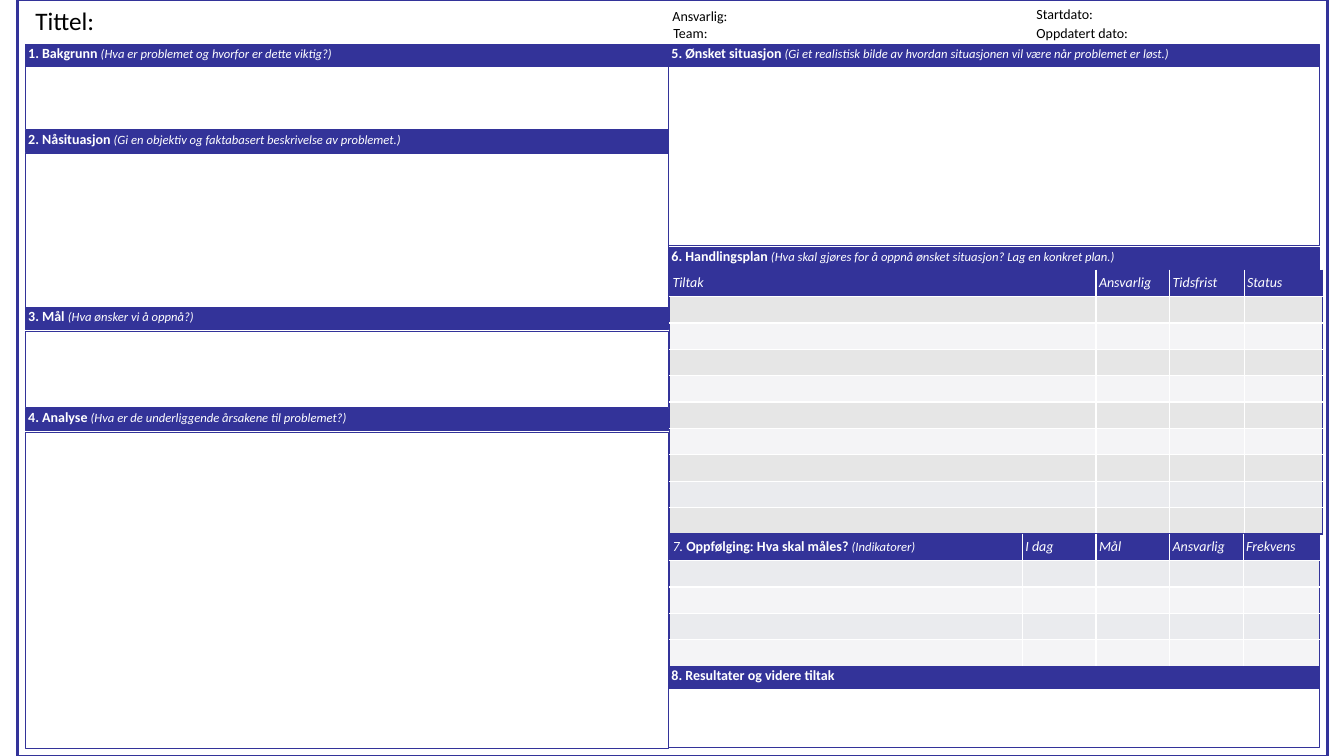
from lxml import etree
from pptx import Presentation
from pptx.dml.color import RGBColor
from pptx.enum.shapes import MSO_SHAPE
from pptx.enum.text import MSO_ANCHOR, PP_ALIGN
from pptx.oxml.ns import qn
from pptx.util import Inches, Pt

NAVY = RGBColor(0x33, 0x33, 0x99)
WHITE = RGBColor(0xFF, 0xFF, 0xFF)
BLACK = RGBColor(0x00, 0x00, 0x00)
GREY = RGBColor(0xE6, 0xE6, 0xE6)
PALE = RGBColor(0xF4, 0xF4, 0xF6)
MIST = RGBColor(0xEA, 0xEB, 0xEE)

FONT = "Calibri"
WIDTH, HEIGHT = 13.33, 7.5
LEFT_COLUMN = (0.25, 6.38)
RIGHT_COLUMN = (6.63, 6.46)
TABLE_LEFT = 6.64
BAR_HEIGHT = 0.22
ROW_HEIGHT = 0.262

# column, bar top, box top, box bottom, heading, hint
SECTIONS = [
    (LEFT_COLUMN, 0.44, 0.66, 1.29, "1. Bakgrunn ",
     "(Hva er problemet og hvorfor er dette viktig?)"),
    (LEFT_COLUMN, 1.29, 1.52, 3.05, "2. Nåsituasjon ",
     "(Gi en objektiv og faktabasert beskrivelse av problemet.)"),
    (LEFT_COLUMN, 3.05, 3.29, 4.04, "3. Mål ", "(Hva ønsker vi å oppnå?)"),
    (LEFT_COLUMN, 4.05, 4.29, 7.43, "4. Analyse ",
     "(Hva er de underliggende årsakene til problemet?)"),
    (RIGHT_COLUMN, 0.44, 0.66, 2.44, "5. Ønsket situasjon ",
     "(Gi et realistisk bilde av hvordan situasjonen vil være når problemet er løst.)"),
    (RIGHT_COLUMN, 2.46, None, None, "6. Handlingsplan ",
     "(Hva skal gjøres for å oppnå ønsket situasjon? Lag en konkret plan.)"),
    (RIGHT_COLUMN, 6.61, 6.82, 7.42, "8. Resultater og videre tiltak", ""),
]

DETAILS = [
    (6.55, 0.01, "Ansvarlig:"),
    (6.56, 0.18, "Team:"),
    (10.16, -0.01, "Startdato:"),
    (10.16, 0.18, "Oppdatert dato:"),
]


def set_margins(target, left, top, right, bottom):
    target.margin_left, target.margin_top = Inches(left), Inches(top)
    target.margin_right, target.margin_bottom = Inches(right), Inches(bottom)


def style_paragraph(paragraph, size, color):
    paragraph.alignment = PP_ALIGN.LEFT
    paragraph.font.name = FONT
    paragraph.font.size = Pt(size)
    paragraph.font.color.rgb = color


def add_runs(paragraph, runs):
    """Add (text, size, bold, italic) runs."""
    for text, size, bold, italic in runs:
        run = paragraph.add_run()
        run.text = text
        run.font.size = Pt(size)
        run.font.bold, run.font.italic = bold, italic


def add_rectangle(slide, left, top, width, height, fill=None, line_width=0.75):
    shape = slide.shapes.add_shape(
        MSO_SHAPE.RECTANGLE, Inches(left), Inches(top), Inches(width), Inches(height))
    shape.shadow.inherit = False
    if fill is None:
        shape.fill.background()
    else:
        shape.fill.solid()
        shape.fill.fore_color.rgb = fill
    shape.line.color.rgb = NAVY
    shape.line.width = Pt(line_width)
    return shape


def add_bar(slide, column, top, heading, hint):
    left, width = column
    text_frame = add_rectangle(slide, left, top, width, BAR_HEIGHT, NAVY).text_frame
    set_margins(text_frame, 0.03, 0, 0, 0)
    text_frame.vertical_anchor = MSO_ANCHOR.TOP
    paragraph = text_frame.paragraphs[0]
    style_paragraph(paragraph, 10, WHITE)
    runs = [(heading, 10, True, False), (hint, 9, False, True)]
    add_runs(paragraph, [run for run in runs if run[0]])


def add_detail(slide, left, top, text):
    box = slide.shapes.add_textbox(Inches(left), Inches(top), Inches(3.14), Inches(0.29))
    text_frame = box.text_frame
    text_frame.word_wrap = True
    set_margins(text_frame, 0.12, 0.06, 0.12, 0.06)
    text_frame.text = text
    style_paragraph(text_frame.paragraphs[0], 10, BLACK)


def set_borders(cell, colors):
    """Draw the cell's borders; colors maps L, R, T and B, in that order."""
    properties = cell._tc.get_or_add_tcPr()
    for side, color in colors.items():
        line = etree.SubElement(properties, qn(f"a:ln{side}"), w=str(Pt(1)))
        fill = etree.SubElement(line, qn("a:solidFill"))
        etree.SubElement(fill, qn("a:srgbClr"), val=str(color))


def add_table(slide, top, widths, headings, row_fills):
    """Add a table whose headings are lists of runs and whose body is empty."""
    fills = [NAVY] + row_fills
    frame = slide.shapes.add_table(
        len(fills), len(widths), Inches(TABLE_LEFT), Inches(top),
        Inches(sum(widths)), Inches(ROW_HEIGHT * len(fills)))
    table = frame.table
    table.first_row = table.horz_banding = False
    for column, width in zip(table.columns, widths):
        column.width = Inches(width)
    last_row, last_column = len(fills) - 1, len(widths) - 1
    for r, fill in enumerate(fills):
        table.rows[r].height = Inches(ROW_HEIGHT)
        for c in range(len(widths)):
            cell = table.cell(r, c)
            set_margins(cell, 0.03, 0.04, 0.03, 0.04)
            set_borders(cell, {
                "L": NAVY if c == 0 else WHITE,
                "R": NAVY if c == last_column else WHITE,
                "T": NAVY if r == 0 else WHITE,
                "B": NAVY if r == last_row else WHITE,
            })
            cell.fill.solid()
            cell.fill.fore_color.rgb = fill
            paragraph = cell.text_frame.paragraphs[0]
            style_paragraph(paragraph, 10, WHITE)
            if r == 0:
                add_runs(paragraph, headings[c])


def plain_headings(*texts):
    return [[(text, 10, False, True)] for text in texts]


def add_title(slide, text):
    title = slide.shapes.title
    title.left, title.top = Inches(LEFT_COLUMN[0]), Inches(0)
    title.width, title.height = Inches(LEFT_COLUMN[1]), Inches(0.4)
    title.text_frame.text = text
    title.text_frame.vertical_anchor = MSO_ANCHOR.TOP
    set_margins(title.text_frame, 0.1, 0.05, 0.1, 0.05)
    style_paragraph(title.text_frame.paragraphs[0], 18, BLACK)


def main():
    presentation = Presentation()
    presentation.slide_width = Inches(WIDTH)
    presentation.slide_height = Inches(HEIGHT)
    slide = presentation.slides.add_slide(presentation.slide_layouts[5])

    page_frame = add_rectangle(slide, 0.17, 0, 13, HEIGHT, WHITE, 2)
    add_title(slide, "Tittel:")
    slide.shapes.title.element.addprevious(page_frame.element)

    for column, bar_top, _, _, heading, hint in SECTIONS:
        add_bar(slide, column, bar_top, heading, hint)
    add_table(slide, 2.68, [4.23, 0.73, 0.74, 0.78],
              plain_headings("Tiltak", "Ansvarlig", "Tidsfrist", "Status"),
              [GREY, PALE] * 3 + [GREY, MIST, GREY])
    follow_up = [("7. ", 10, False, True),
                 ("Oppfølging: Hva skal måles? ", 10, True, False),
                 ("(Indikatorer)", 9, False, True)]
    add_table(slide, 5.3, [3.5, 0.73, 0.73, 0.73, 0.76],
              [follow_up] + plain_headings("I dag", "Mål", "Ansvarlig", "Frekvens"),
              [MIST, PALE] * 2)
    for (left, width), _, top, bottom, _, _ in SECTIONS:
        if top is not None:
            add_rectangle(slide, left, top, width, bottom - top)
    for left, top, text in DETAILS:
        add_detail(slide, left, top, text)

    presentation.save("out.pptx")


if __name__ == "__main__":
    main()
